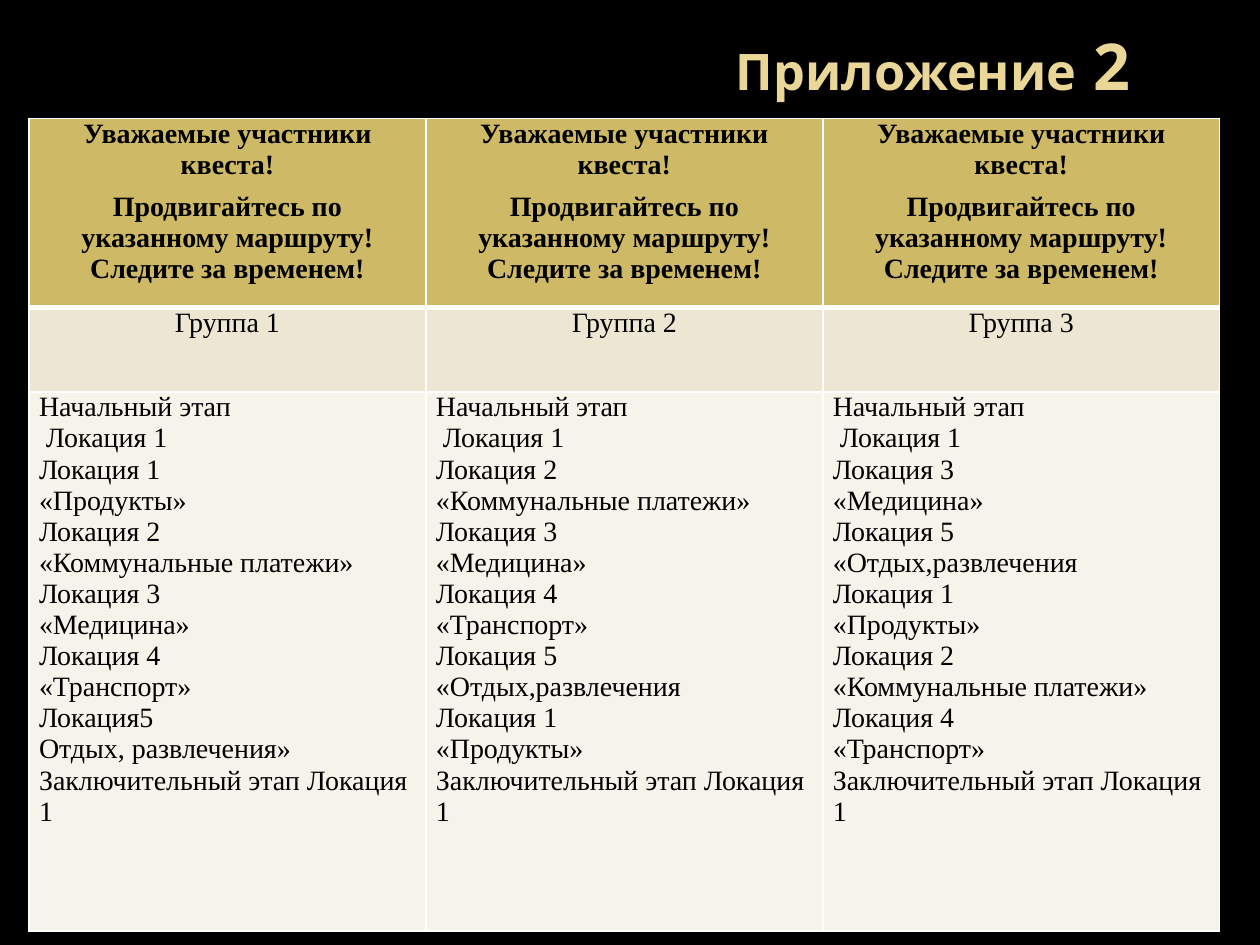
import pptx
import pptx.dml.color
import pptx.enum.text
import pptx.oxml
import pptx.oxml.ns
import pptx.util
from lxml import etree

RGB = pptx.dml.color.RGBColor
BLACK = RGB(0x00, 0x00, 0x00)
WHITE = RGB(0xFF, 0xFF, 0xFF)
TITLE_GOLD = RGB(0xEA, 0xD6, 0x96)
HEADER_GOLD = RGB(0xCE, 0xB9, 0x66)
GROUP_BEIGE = RGB(0xED, 0xE6, 0xD3)
ROUTE_CREAM = RGB(0xF6, 0xF3, 0xEA)

CENTER = pptx.enum.text.PP_ALIGN.CENTER
LEFT = pptx.enum.text.PP_ALIGN.LEFT
MIDDLE = pptx.enum.text.MSO_ANCHOR.MIDDLE
Inches = pptx.util.Inches
Pt = pptx.util.Pt

GREETING = "Уважаемые участники квеста!"
INSTRUCTION = "Продвигайтесь по указанному маршруту! Следите за временем!"
START = ["Начальный этап", " Локация 1"]
FINISH = "Заключительный этап Локация 1"
ROUTES = [
    ["Локация 1", "«Продукты»", "Локация 2", "«Коммунальные платежи»",
     "Локация 3", "«Медицина»", "Локация 4", "«Транспорт»",
     "Локация5", "Отдых, развлечения»"],
    ["Локация 2", "«Коммунальные платежи»", "Локация 3", "«Медицина»",
     "Локация 4", "«Транспорт»", "Локация 5", "«Отдых,развлечения",
     "Локация 1", "«Продукты»"],
    ["Локация 3", "«Медицина»", "Локация 5", "«Отдых,развлечения",
     "Локация 1", "«Продукты»", "Локация 2", "«Коммунальные платежи»",
     "Локация 4", "«Транспорт»"],
]
ROW_HEIGHTS = [1.5, 0.67, 4.28]


def write(paragraph, text, *, size=16, font="Times New Roman", color=BLACK,
          bold=False, align=LEFT, before=0, after=0):
    """Append a formatted run and set the spacing of its paragraph."""
    paragraph.alignment = align
    paragraph.space_before = Pt(before)
    paragraph.space_after = Pt(after)
    run = paragraph.add_run()
    run.text = text
    run.font.size = Pt(size)
    run.font.name = font
    run.font.bold = bold
    run.font.color.rgb = color


def set_borders(cell, bottom=1):
    """Draw white cell borders; only the bottom width varies."""
    properties = cell._tc.get_or_add_tcPr()
    widths = {"lnL": 1, "lnR": 1, "lnT": 1, "lnB": bottom}
    for position, (side, width) in enumerate(widths.items()):
        line = etree.Element(pptx.oxml.ns.qn(f"a:{side}"), w=str(Pt(width)))
        fill = etree.SubElement(line, pptx.oxml.ns.qn("a:solidFill"))
        etree.SubElement(fill, pptx.oxml.ns.qn("a:srgbClr"), val=str(WHITE))
        properties.insert(position, line)


def fill_cell(cell, paragraphs, fill, bottom=1):
    """Fill a cell from (text, format) pairs, one per paragraph."""
    cell.fill.solid()
    cell.fill.fore_color.rgb = fill
    cell.margin_left = cell.margin_right = Inches(0.08)
    cell.margin_top = cell.margin_bottom = 0
    set_borders(cell, bottom)
    frame = cell.text_frame
    for index, (text, style) in enumerate(paragraphs):
        paragraph = frame.add_paragraph() if index else frame.paragraphs[0]
        write(paragraph, text, **style)


def add_title(slide, left, top, width, height):
    heading = slide.shapes.add_textbox(left, top, width, height)
    frame = heading.text_frame
    frame.word_wrap = True
    frame.vertical_anchor = MIDDLE
    for text, size in (("Приложение", 28.8), (" 2", 36.9)):
        write(frame.paragraphs[0], text, size=size, font="Open Sans",
              color=TITLE_GOLD, bold=True, align=CENTER)


def add_routes(slide, left, top, width, height):
    routes = slide.shapes.add_table(
        len(ROW_HEIGHTS), len(ROUTES), left, top, width, height).table
    for row, share in zip(routes.rows, ROW_HEIGHTS):
        row.height = int(height * share / sum(ROW_HEIGHTS))

    centered = {"align": CENTER}
    spaced = {"align": CENTER, "before": 6, "after": 6}
    for column, stops in enumerate(ROUTES):
        routes.columns[column].width = int(width / len(ROUTES))
        # Greeting, group name, then the route itself
        fill_cell(routes.cell(0, column),
                  [(GREETING, {**centered, "bold": True}),
                   (INSTRUCTION, {**spaced, "bold": True})],
                  HEADER_GOLD, bottom=3)
        fill_cell(routes.cell(1, column),
                  [(f"Группа {column + 1}", spaced)], GROUP_BEIGE)
        fill_cell(routes.cell(2, column),
                  [(line, {}) for line in START + stops]
                  + [(FINISH, {"after": 6})], ROUTE_CREAM)


def main():
    deck = pptx.Presentation()
    deck.slide_width, deck.slide_height = Inches(10), Inches(7.5)
    slide = deck.slides.add_slide(deck.slide_layouts[6])
    slide.background.fill.solid()
    slide.background.fill.fore_color.rgb = BLACK

    add_title(slide, Inches(5.31), Inches(0.16), Inches(4.19), Inches(0.7))
    add_routes(slide, Inches(0.23), Inches(0.94), Inches(9.45), Inches(6.45))
    deck.save("out.pptx")


if __name__ == "__main__":
    main()
